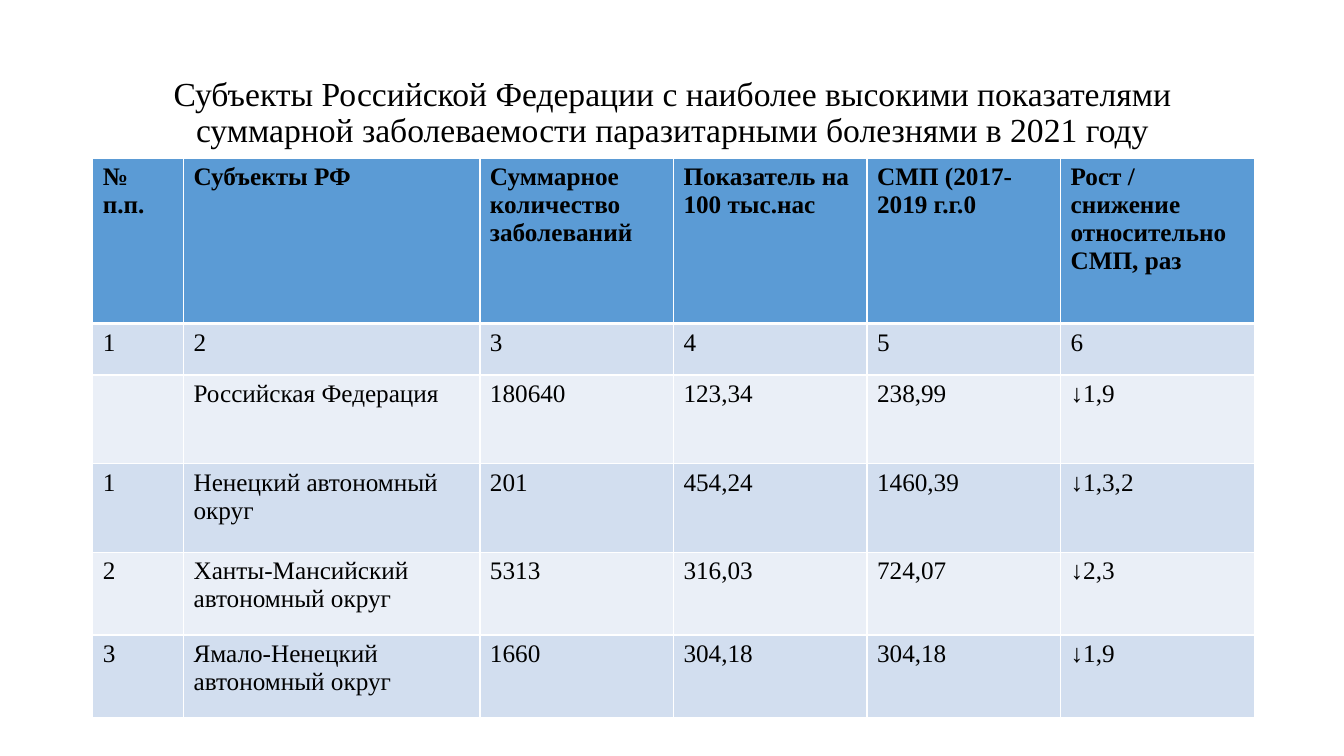
from lxml.etree import SubElement
from pptx import Presentation
from pptx.dml.color import RGBColor
from pptx.enum.text import MSO_ANCHOR, PP_ALIGN
from pptx.oxml.ns import qn
from pptx.util import Inches, Pt

BLACK = RGBColor(0x00, 0x00, 0x00)
WHITE = RGBColor(0xFF, 0xFF, 0xFF)
HEADER_BLUE = RGBColor(0x5B, 0x9B, 0xD5)
BAND_DARK = RGBColor(0xD2, 0xDE, 0xEF)
BAND_LIGHT = RGBColor(0xEA, 0xEF, 0xF7)

TITLE = ("Субъекты Российской Федерации с наиболее высокими показателями "
         "суммарной заболеваемости паразитарными болезнями в 2021 году")
COLUMN_WIDTHS = [0.9, 2.94] + [1.92] * 4
ROW_HEIGHTS = [1.64, 0.51, 0.88, 0.88, 0.82, 0.82]
ROWS = [
    ["№ п.п.", "Субъекты РФ", "Суммарное количество заболеваний",
     "Показатель на 100 тыс.нас", "СМП (2017-2019 г.г.0",
     "Рост / снижение относительно СМП, раз"],
    ["1", "2", "3", "4", "5", "6"],
    ["", "Российская Федерация", "180640", "123,34", "238,99", "↓1,9"],
    ["1", "Ненецкий автономный округ", "201", "454,24", "1460,39", "↓1,3,2"],
    ["2", "Ханты-Мансийский автономный округ", "5313", "316,03", "724,07", "↓2,3"],
    ["3", "Ямало-Ненецкий автономный округ", "1660", "304,18", "304,18", "↓1,9"],
]


class SlideBuilder:
    font_name = "Times New Roman"

    def __init__(self, slide):
        self.slide = slide

    def format_text(self, paragraph, size, bold=False):
        for run in paragraph.runs:
            run.font.name = self.font_name
            run.font.size = Pt(size)
            run.font.bold = bold
            run.font.color.rgb = BLACK

    def add_title(self, text, left, top, width, height):
        title = self.slide.shapes.title
        title.left, title.top = Inches(left), Inches(top)
        title.width, title.height = Inches(width), Inches(height)
        frame = title.text_frame
        frame.text = text
        frame.word_wrap = True
        frame.vertical_anchor = MSO_ANCHOR.MIDDLE
        # Wider side margins keep the break after the first phrase
        frame.margin_left = frame.margin_right = Inches(0.3)
        paragraph = frame.paragraphs[0]
        paragraph.alignment = PP_ALIGN.CENTER
        paragraph.line_spacing = 0.9
        self.format_text(paragraph, 24)

    def set_borders(self, cell, top, bottom):
        properties = cell._tc.get_or_add_tcPr()
        for side, width in (("L", 1), ("R", 1), ("T", top), ("B", bottom)):
            line = SubElement(properties, qn(f"a:ln{side}"), w=str(Pt(width)))
            fill = SubElement(line, qn("a:solidFill"))
            SubElement(fill, qn("a:srgbClr"), val=str(WHITE))

    def add_table(self, rows, left, top, column_widths, row_heights):
        table = self.slide.shapes.add_table(
            len(rows), len(column_widths), Inches(left), Inches(top),
            Inches(sum(column_widths)), Inches(sum(row_heights))).table
        for column, width in zip(table.columns, column_widths):
            column.width = Inches(width)
        for index, (row, height) in enumerate(zip(table.rows, row_heights)):
            row.height = Inches(height)
            is_header = index == 0
            band = BAND_DARK if index % 2 else BAND_LIGHT
            for cell, text in zip(row.cells, rows[index]):
                cell.text = text
                self.format_text(cell.text_frame.paragraphs[0], 18, is_header)
                # A thick rule separates the header from the body
                self.set_borders(cell, top=3 if index == 1 else 1,
                                 bottom=3 if is_header else 1)
                cell.fill.solid()
                cell.fill.fore_color.rgb = HEADER_BLUE if is_header else band


def main():
    presentation = Presentation()
    presentation.slide_width = Inches(13.33)
    presentation.slide_height = Inches(7.5)
    title_only = presentation.slide_layouts[5]
    builder = SlideBuilder(presentation.slides.add_slide(title_only))

    # Heading
    builder.add_title(TITLE, 0.92, 0.4, 11.5, 1.45)

    # Incidence by region
    builder.add_table(ROWS, 0.92, 1.57, COLUMN_WIDTHS, ROW_HEIGHTS)

    presentation.save("out.pptx")


if __name__ == "__main__":
    main()
